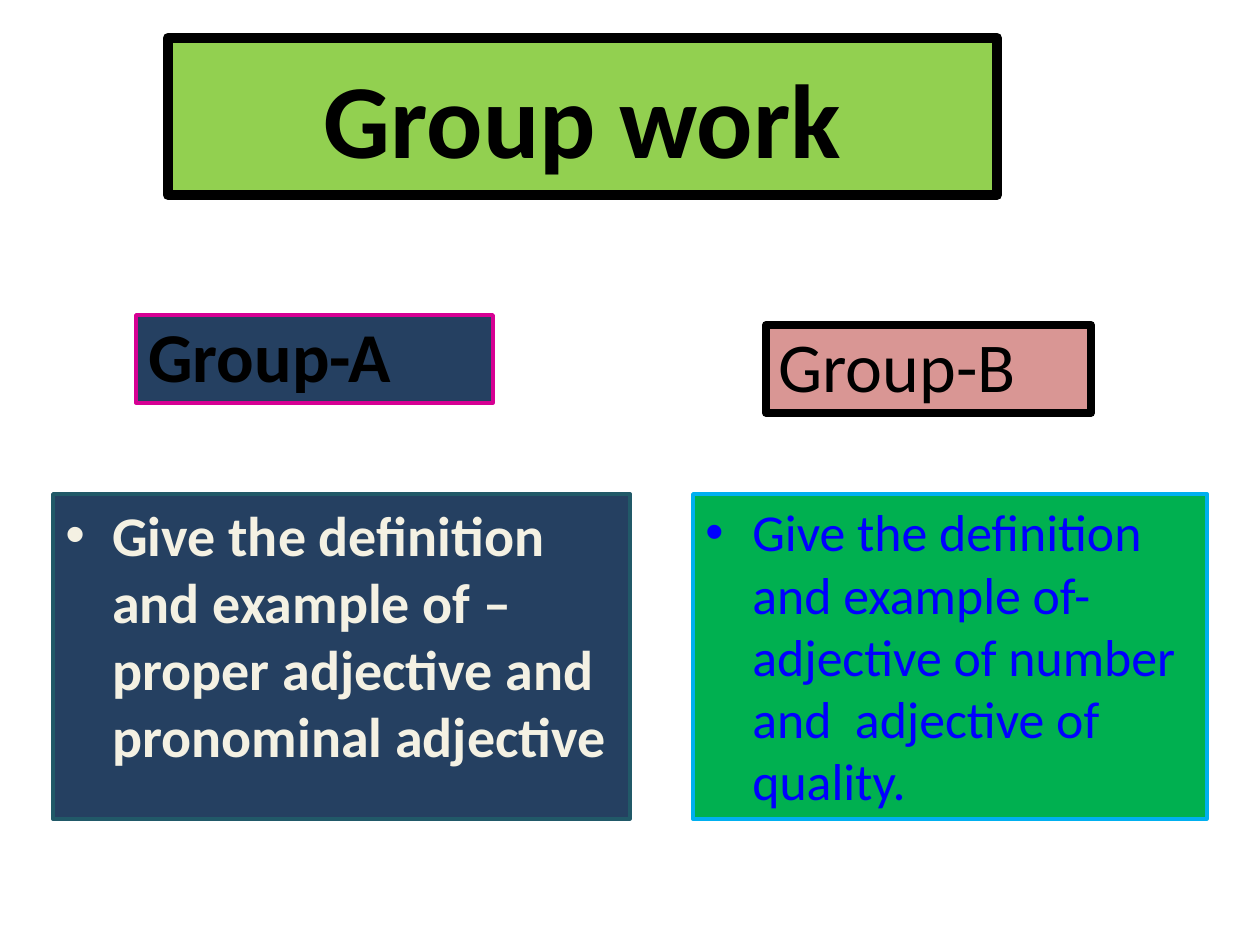
from dataclasses import dataclass

from lxml import etree
from pptx import Presentation
from pptx.dml.color import RGBColor
from pptx.enum.shapes import MSO_SHAPE
from pptx.enum.text import MSO_ANCHOR, PP_ALIGN
from pptx.oxml.ns import qn
from pptx.util import Emu, Pt

RECTANGLE = MSO_SHAPE.RECTANGLE
TOP, MIDDLE, BOTTOM = MSO_ANCHOR.TOP, MSO_ANCHOR.MIDDLE, MSO_ANCHOR.BOTTOM
LEFT, CENTER = PP_ALIGN.LEFT, PP_ALIGN.CENTER

PX_PER_INCH = 126
FONT = "Calibri"
BLACK, NAVY = "000000", "254061"
HEADING_HEIGHT = 88
TASK_TOP, TASK_HEIGHT = 494, 325
BULLET_INDENT = 47


@dataclass
class Panel:
    left: int
    top: int
    width: int
    height: int
    fill: str
    line: str
    line_width: float


@dataclass
class Group:
    name: str
    heading: Panel
    task_text: str
    task: Panel
    task_size: float
    task_color: str
    bold: bool


GROUPS = [
    Group("Group-A", Panel(136, 315, 357, HEADING_HEIGHT, NAVY, "D60093", 2),
          "Give the definition and example of – proper adjective and pronominal adjective",
          Panel(53, TASK_TOP, 577, TASK_HEIGHT, NAVY, "215968", 2),
          32, "F4F1E3", True),
    Group("Group-B", Panel(766, 325, 325, HEADING_HEIGHT, "D99694", BLACK, 4.5),
          "Give the definition and example of- adjective of number and  adjective of quality.",
          Panel(693, TASK_TOP, 514, TASK_HEIGHT, "00B050", "00B0F0", 2),
          29.6, "0000FF", False),
]


def px(length: int) -> Emu:
    return Emu(round(length * 914400 / PX_PER_INCH))


def rgb(color: str) -> RGBColor:
    return RGBColor.from_string(color)


def add_bullet(para) -> None:
    properties = para._p.get_or_add_pPr()
    properties.set("marL", str(px(BULLET_INDENT)))
    properties.set("indent", str(-px(BULLET_INDENT)))
    etree.SubElement(properties, qn("a:buFont")).set("typeface", "Arial")
    etree.SubElement(properties, qn("a:buChar")).set("char", "•")


def add_panel(page, panel: Panel):
    box = page.shapes.add_shape(RECTANGLE, px(panel.left), px(panel.top),
                                px(panel.width), px(panel.height))
    box.shadow.inherit = False
    box.fill.solid()
    box.fill.fore_color.rgb = rgb(panel.fill)
    box.line.color.rgb = rgb(panel.line)
    box.line.width = Pt(panel.line_width)
    return box


def write(box, text: str, *, size: float, color: str = BLACK, bold: bool = False,
          align=LEFT, anchor=TOP, bullet: bool = False) -> None:
    frame = box.text_frame
    frame.word_wrap = True
    frame.vertical_anchor = anchor
    para = frame.paragraphs[0]
    para.alignment = align
    if bullet:
        add_bullet(para)
    span = para.add_run()
    span.text = text
    span.font.name = FONT
    span.font.size = Pt(size)
    span.font.bold = bold
    span.font.color.rgb = rgb(color)


def add_group(page, group: Group) -> None:
    write(add_panel(page, group.heading), group.name, size=40, bold=group.bold,
          anchor=BOTTOM)
    write(add_panel(page, group.task), group.task_text, size=group.task_size,
          color=group.task_color, bold=group.bold, bullet=True)


def main() -> None:
    deck = Presentation()
    deck.slide_width, deck.slide_height = px(1260), px(945)
    page = deck.slides.add_slide(deck.slide_layouts[6])
    title = add_panel(page, Panel(168, 38, 829, 157, "92D050", BLACK, 6))
    write(title, "Group work", size=60, bold=True, align=CENTER, anchor=MIDDLE)
    for group in GROUPS:
        add_group(page, group)
    deck.save("out.pptx")


if __name__ == "__main__":
    main()
